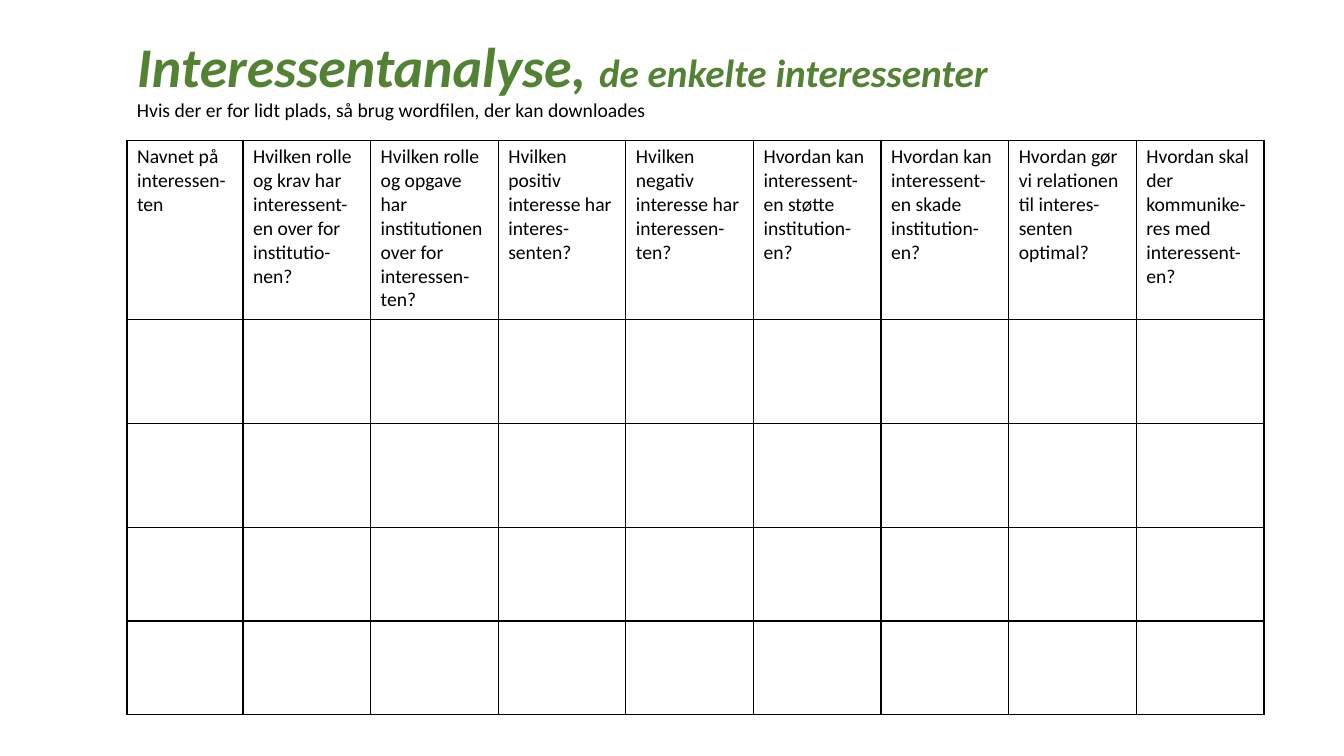
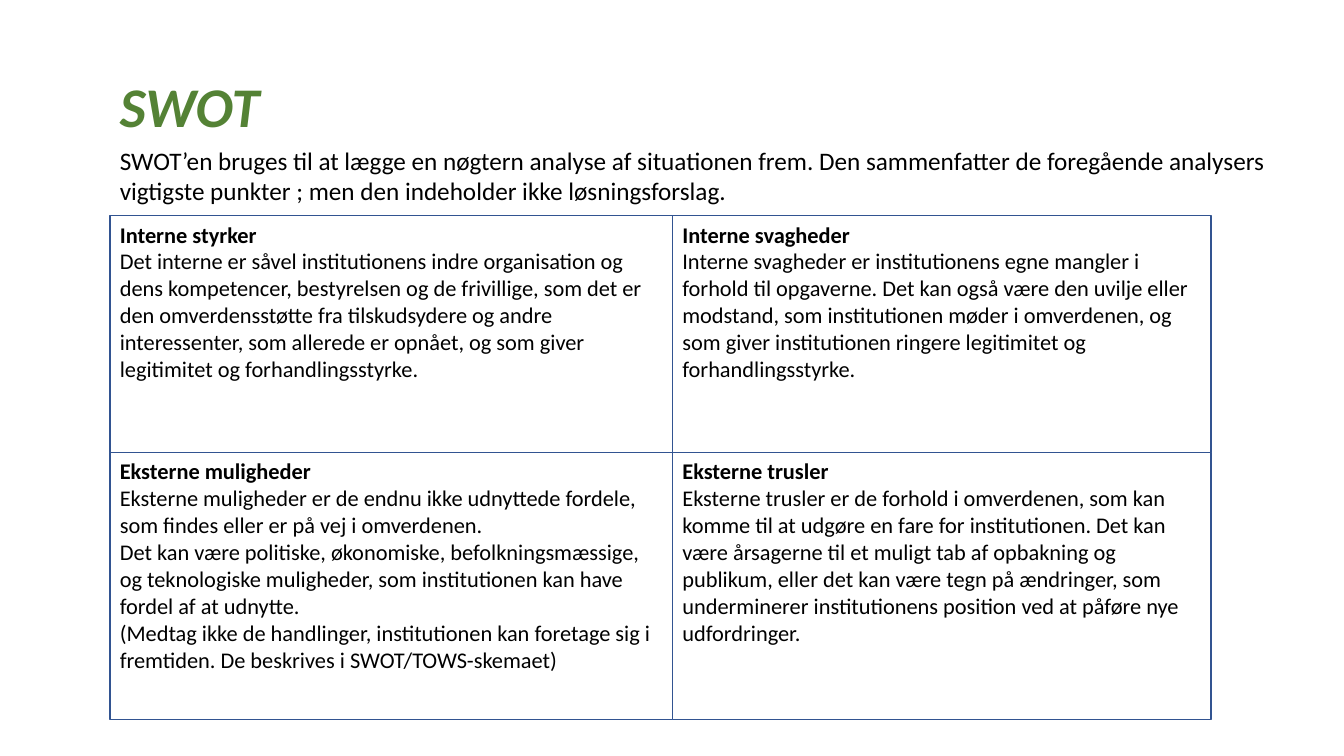
from lxml import etree
from pptx import Presentation
from pptx.dml.color import RGBColor
from pptx.enum.shapes import MSO_SHAPE
from pptx.enum.text import MSO_ANCHOR, PP_ALIGN
from pptx.oxml.ns import qn
from pptx.util import Inches, Pt

RECTANGLE = MSO_SHAPE.RECTANGLE
TOP = MSO_ANCHOR.TOP
LEFT = PP_ALIGN.LEFT

COLORS = {"title": "548235", "text": "000000", "paper": "FFFFFF",
          "grid": "000000", "quadrant": "325491"}
FONT = "Calibri"
TITLE = {"size": 40, "color": "title", "bold": True, "italic": True}

QUESTIONS = [
    "Navnet på interessen-ten",
    "Hvilken rolle og krav har interessent-en over for institutio-nen?",
    "Hvilken rolle og opgave har institutionen over for interessen-ten?",
    "Hvilken positiv interesse har interes-senten?",
    "Hvilken negativ interesse har interessen-ten?",
    "Hvordan kan interessent-en støtte institution-en?",
    "Hvordan kan interessent-en skade institution-en?",
    "Hvordan gør vi relationen til interes-senten optimal?",
    "Hvordan skal der kommunike-res med interessent-en?",
]

SWOT = [
    [("Interne styrker", [
        "Det interne er såvel institutionens indre organisation og dens kompetencer, "
        "bestyrelsen og de frivillige, som det er den omverdensstøtte fra tilskudsydere "
        "og andre interessenter, som allerede er opnået, og som giver legitimitet og "
        "forhandlingsstyrke."]),
     ("Interne svagheder", [
        "Interne svagheder er institutionens egne mangler i forhold til opgaverne. Det "
        "kan også være den uvilje eller modstand, som institutionen møder i omverdenen, "
        "og som giver institutionen ringere legitimitet og forhandlingsstyrke."])],
    [("Eksterne muligheder", [
        "Eksterne muligheder er de endnu ikke udnyttede fordele, som findes eller er på "
        "vej i omverdenen.",
        "Det kan være politiske, økonomiske, befolkningsmæssige, og teknologiske "
        "muligheder, som institutionen kan have fordel af at udnytte.",
        "(Medtag ikke de handlinger, institutionen kan foretage sig i fremtiden. De "
        "beskrives i SWOT/TOWS-skemaet)"]),
     ("Eksterne trusler", [
        "Eksterne trusler er de forhold i omverdenen, som kan komme til at udgøre en "
        "fare for institutionen. Det kan være årsagerne til et muligt tab af opbakning "
        "og publikum, eller det kan være tegn på ændringer, som underminerer "
        "institutionens position ved at påføre nye udfordringer."])],
]


def rgb(name):
    return RGBColor.from_string(COLORS[name])


def write(paragraph, text, size, color="text", bold=False, italic=False):
    paragraph.alignment = LEFT
    run = paragraph.add_run()
    run.text = text
    font = run.font
    font.name, font.size = FONT, Pt(size)
    font.bold, font.italic = bold, italic
    font.color.rgb = rgb(color)


def text_frame(slide, left, top, width, height):
    box = slide.shapes.add_textbox(Inches(left), Inches(top), Inches(width), Inches(height))
    box.text_frame.word_wrap = True
    return box.text_frame


def outline_cell(cell):
    properties = cell._tc.get_or_add_tcPr()
    for side in ("a:lnL", "a:lnR", "a:lnT", "a:lnB"):
        line = etree.SubElement(properties, qn(side), w=str(Pt(1)))
        fill = etree.SubElement(line, qn("a:solidFill"))
        etree.SubElement(fill, qn("a:srgbClr"), val=COLORS["grid"])
    cell.fill.solid()
    cell.fill.fore_color.rgb = rgb("paper")


def stakeholder_table(slide, left, top, widths, heights):
    table = slide.shapes.add_table(
        len(heights), len(widths), Inches(left), Inches(top),
        Inches(sum(widths)), Inches(sum(heights))).table
    table.first_row = table.horz_banding = False
    for column, width in zip(table.columns, widths):
        column.width = Inches(width)
    for row, height in zip(table.rows, heights):
        row.height = Inches(height)
    for cell in table.iter_cells():
        outline_cell(cell)
    for index, question in enumerate(QUESTIONS):
        write(table.cell(0, index).text_frame.paragraphs[0], question, 14)


def quadrant(slide, left, top, width, height, heading, body):
    box = slide.shapes.add_shape(
        RECTANGLE, Inches(left), Inches(top), Inches(width), Inches(height))
    box.shadow.inherit = False
    box.fill.solid()
    box.fill.fore_color.rgb = rgb("paper")
    box.line.color.rgb = rgb("quadrant")
    box.line.width = Pt(1)
    frame = box.text_frame
    frame.word_wrap = True
    frame.vertical_anchor = TOP
    write(frame.paragraphs[0], heading, 16, bold=True)
    for text in body:
        write(frame.add_paragraph(), text, 16)


def swot_matrix(slide, left, top, widths, heights):
    for row, quadrants in enumerate(SWOT):
        for column, (heading, body) in enumerate(quadrants):
            quadrant(slide, left + sum(widths[:column]), top + sum(heights[:row]),
                     widths[column], heights[row], heading, body)


def stakeholder_slide(slide):
    left = 1.26
    heading = text_frame(slide, left, 0.26, 8.73, 1.01)
    write(heading.paragraphs[0], "Interessentanalyse, ", **TITLE)
    write(heading.paragraphs[0], "de enkelte interessenter", **{**TITLE, "size": 28})
    write(heading.add_paragraph(),
          "Hvis der er for lidt plads, så brug wordfilen, der kan downloades", 14)
    stakeholder_table(slide, left, 1.39, [1.15] + [1.266] * 8,
                      [1.78, 1.03, 1.03, 0.93, 0.93])


def swot_slide(slide):
    left = 1.09
    swot_matrix(slide, left, 2.14, [5.58, 5.34], [2.35, 2.65])
    write(text_frame(slide, left, 0.66, 2.04, 0.77).paragraphs[0], "SWOT", **TITLE)
    intro = text_frame(slide, left, 1.39, 11.7, 0.71)
    write(intro.paragraphs[0],
          "SWOT’en bruges til at lægge en nøgtern analyse af situationen frem. "
          "Den sammenfatter de foregående analysers", 18)
    write(intro.add_paragraph(),
          "vigtigste punkter ; men den indeholder ikke løsningsforslag.", 18)


def main():
    presentation = Presentation()
    presentation.slide_width = Inches(13.33)
    presentation.slide_height = Inches(7.5)
    blank = presentation.slide_layouts[6]
    for build in (stakeholder_slide, swot_slide):
        build(presentation.slides.add_slide(blank))
    presentation.save("out.pptx")


if __name__ == "__main__":
    main()
